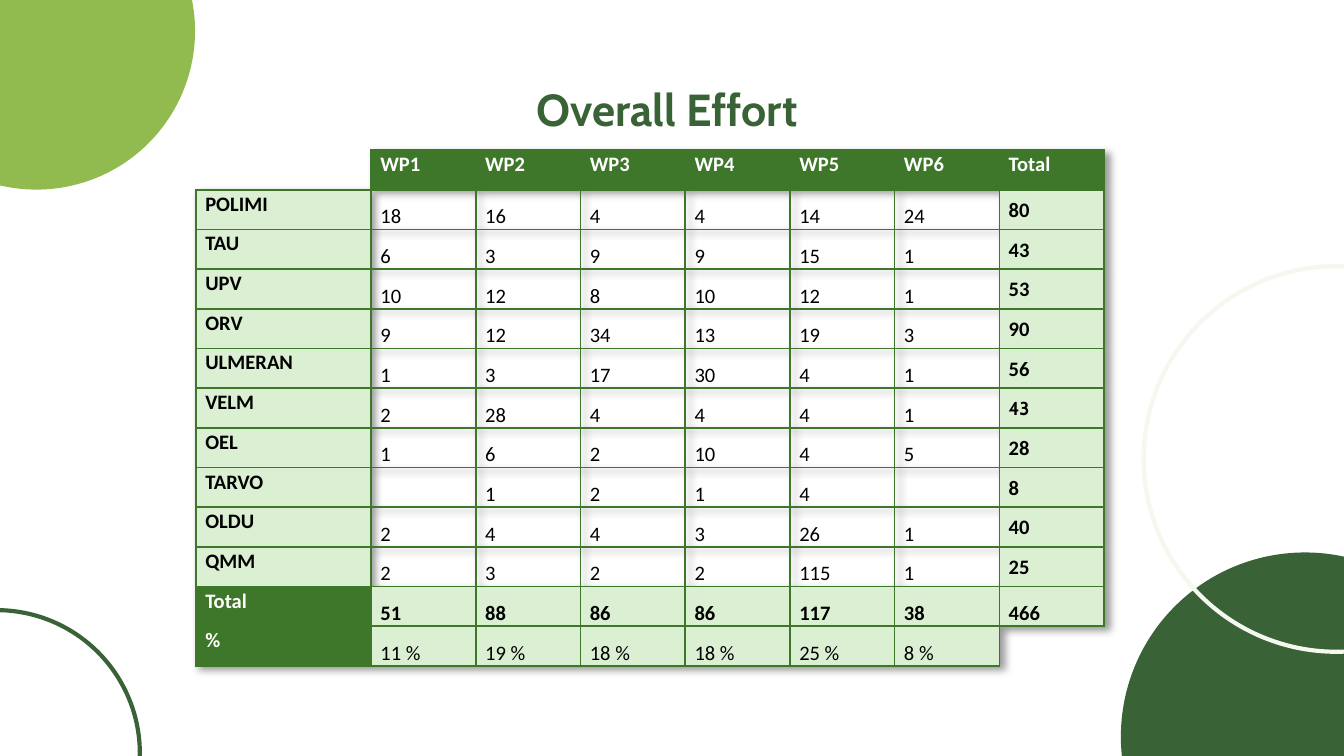
from lxml.etree import SubElement
from pptx import Presentation
from pptx.dml.color import RGBColor
from pptx.enum.shapes import MSO_SHAPE
from pptx.enum.text import MSO_ANCHOR, PP_ALIGN
from pptx.oxml.ns import qn
from pptx.util import Pt

DARK_GREEN = RGBColor(0x39, 0x63, 0x36)
LIGHT_GREEN = RGBColor(0x91, 0xBA, 0x4F)
IVORY = RGBColor(0xF4, 0xF8, 0xEE)
TABLE_GREEN = RGBColor(0x3E, 0x76, 0x2A)
PALE_GREEN = RGBColor(0xDB, 0xEF, 0xD3)
WHITE = RGBColor(0xFF, 0xFF, 0xFF)
BLACK = RGBColor(0, 0, 0)

# Content
TITLE = "Overall Effort "
ROWS = [
    ("", "WP1", "WP2", "WP3", "WP4", "WP5", "WP6", "Total"),
    ("POLIMI", "18", "16", "4", "4", "14", "24", "80"),
    ("TAU", "6", "3", "9", "9", "15", "1", "43"),
    ("UPV", "10", "12", "8", "10", "12", "1", "53"),
    ("ORV", "9", "12", "34", "13", "19", "3", "90"),
    ("ULMERAN", "1", "3", "17", "30", "4", "1", "56"),
    ("VELM", "2", "28", "4", "4", "4", "1", "43"),
    ("OEL", "1", "6", "2", "10", "4", "5", "28"),
    ("TARVO", "", "1", "2", "1", "4", "", "8"),
    ("OLDU", "2", "4", "4", "3", "26", "1", "40"),
    ("QMM", "2", "3", "2", "2", "115", "1", "25"),
    ("Total", "51", "88", "86", "86", "117", "38", "466"),
    ("%", "11 %", "19 %", "18 %", "18 %", "25 %", "8 %", ""),
]
# Circles: left, top, diameter, fill, outline
CIRCLES = [
    (600.5, 296, 197.3, DARK_GREEN, None),
    (-65.5, -68.4, 170, LIGHT_GREEN, None),
    (-78.5, 326.9, 153.4, None, DARK_GREEN),
    (612.7, 142.6, 206.6, None, IVORY),
]
TABLE_LEFT, TABLE_TOP = 105, 80.4
NAME_WIDTH, VALUE_WIDTH, ROW_HEIGHT = 93.8, 56.1, 21.26
NO_STYLE = "{2D5ABB26-0587-4C30-8999-92F81FD0307C}"
LAST_ROW, LAST_COLUMN = len(ROWS) - 1, len(ROWS[0]) - 1
TOTAL_ROW = LAST_ROW - 1
CORNER_SIDES = {(0, 0): ("R", "B"), (LAST_ROW, LAST_COLUMN): ("L", "T")}


def add_color(parent, color):
    return SubElement(parent, qn("a:srgbClr"), val=str(color))


def add_circle(slide, left, top, diameter, fill, outline):
    circle = slide.shapes.add_shape(
        MSO_SHAPE.OVAL, Pt(left), Pt(top), Pt(diameter), Pt(diameter))
    circle.shadow.inherit = False
    if fill:
        circle.fill.solid()
        circle.fill.fore_color.rgb = fill
        circle.line.fill.background()
    else:
        circle.fill.background()
        circle.line.color.rgb = outline
        circle.line.width = Pt(2.25)


def add_table_shadow(table):
    properties = table._tbl.tblPr
    properties.find(qn("a:tableStyleId")).text = NO_STYLE
    effects = SubElement(properties, qn("a:effectLst"))
    shadow = SubElement(effects, qn("a:outerShdw"), blurRad=str(Pt(4)),
                        dist=str(Pt(3)), dir="2700000", algn="tl", rotWithShape="0")
    SubElement(add_color(shadow, BLACK), qn("a:alpha"), val="40000")
    properties.insert(0, effects)


def set_borders(cell, sides):
    # Borders come before the fill in the cell properties
    properties = cell._tc.get_or_add_tcPr()
    for side in sides:
        line = SubElement(properties, qn("a:ln" + side), w=str(Pt(1)))
        add_color(SubElement(line, qn("a:solidFill")), TABLE_GREEN)


def cell_fill(row, column):
    if (row, column) in CORNER_SIDES:
        return None
    if row == 0 or (column == 0 and row >= TOTAL_ROW):
        return TABLE_GREEN
    if column in (0, LAST_COLUMN) or row >= TOTAL_ROW:
        return PALE_GREEN
    return None


def cell_anchor(row, column):
    if row == 0 or column == 0:
        return MSO_ANCHOR.TOP
    if column == LAST_COLUMN and row < TOTAL_ROW:
        return MSO_ANCHOR.MIDDLE
    return MSO_ANCHOR.BOTTOM


def format_cell(cell, row, column, text):
    set_borders(cell, CORNER_SIDES.get((row, column), ("L", "R", "T", "B")))
    fill = cell_fill(row, column)
    if fill:
        cell.fill.solid()
        cell.fill.fore_color.rgb = fill
    else:
        cell.fill.background()
    cell.margin_left = cell.margin_right = Pt(5)
    cell.margin_top = cell.margin_bottom = Pt(0)
    cell.vertical_anchor = cell_anchor(row, column)
    paragraph = cell.text_frame.paragraphs[0]
    if not text:
        SubElement(paragraph._p, qn("a:endParaRPr"), sz="1100")
        return
    paragraph.line_spacing = 1.07
    paragraph.space_after = Pt(8)
    run = paragraph.add_run()
    run.text = text
    run.font.name = "Calibri"
    run.font.size = Pt(11)
    run.font.bold = row in (0, TOTAL_ROW) or column in (0, LAST_COLUMN)
    run.font.color.rgb = WHITE if fill == TABLE_GREEN else BLACK


def main():
    presentation = Presentation()
    presentation.slide_width, presentation.slide_height = Pt(720), Pt(405)
    slide = presentation.slides.add_slide(presentation.slide_layouts[5])

    # Decorative circles
    for circle in CIRCLES:
        add_circle(slide, *circle)

    # Title
    title = slide.shapes.title
    title.left, title.top, title.width, title.height = Pt(24.5), Pt(35.3), Pt(671), Pt(45.4)
    frame = title.text_frame
    frame.margin_left = frame.margin_right = frame.margin_top = frame.margin_bottom = Pt(7.2)
    frame.vertical_anchor = MSO_ANCHOR.MIDDLE
    paragraph = frame.paragraphs[0]
    paragraph.alignment = PP_ALIGN.CENTER
    run = paragraph.add_run()
    run.text = TITLE
    run.font.name = "Cabin"
    run.font.size = Pt(24)
    run.font.bold = True
    run.font.color.rgb = DARK_GREEN

    # Effort table
    table = slide.shapes.add_table(
        len(ROWS), len(ROWS[0]), Pt(TABLE_LEFT), Pt(TABLE_TOP),
        Pt(NAME_WIDTH + LAST_COLUMN * VALUE_WIDTH), Pt(ROW_HEIGHT * len(ROWS))).table
    add_table_shadow(table)
    for index, column in enumerate(table.columns):
        column.width = Pt(VALUE_WIDTH if index else NAME_WIDTH)
    for row, texts in enumerate(ROWS):
        table.rows[row].height = Pt(ROW_HEIGHT)
        for column, text in enumerate(texts):
            format_cell(table.cell(row, column), row, column, text)

    # The total for VELM has its own font
    font = table.cell(6, LAST_COLUMN).text_frame.paragraphs[0].runs[0].font
    font.name, font.size = "Cabin", Pt(10)

    presentation.save("out.pptx")


if __name__ == "__main__":
    main()
